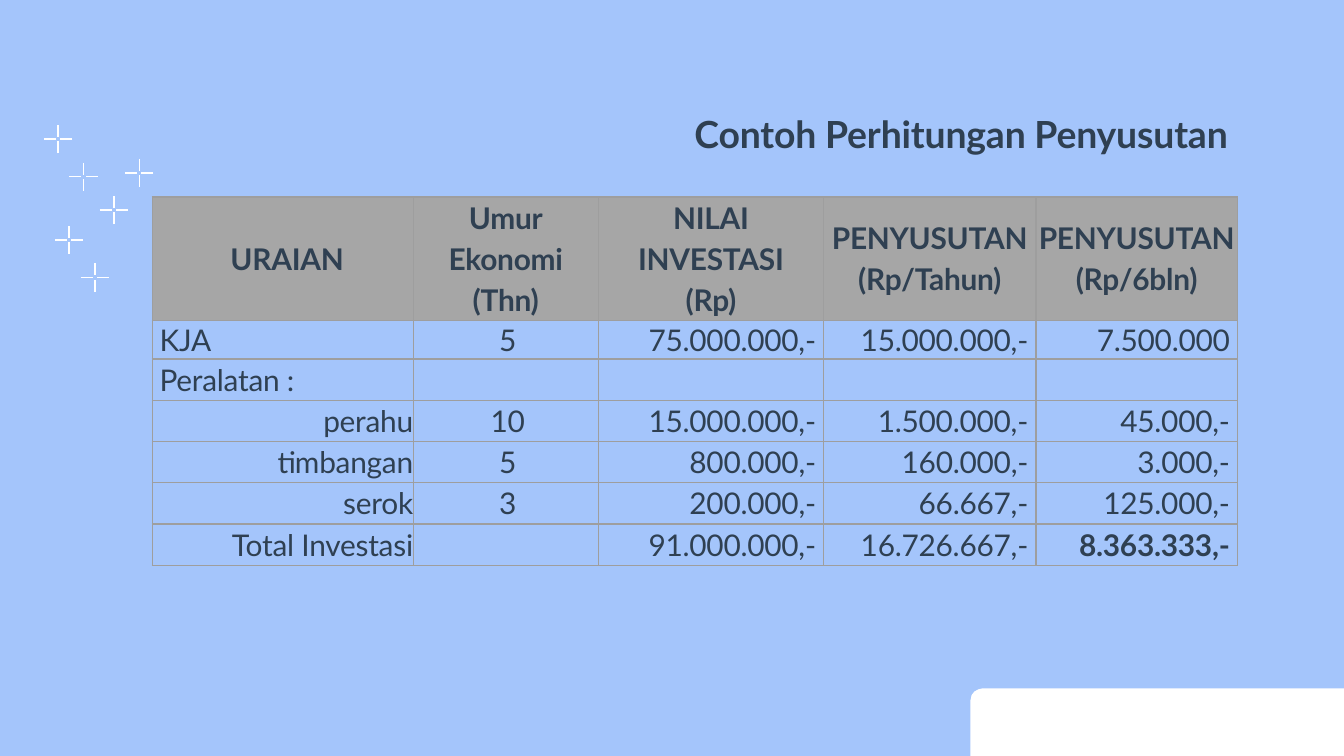
"""Build the slide with a worked depreciation table."""
from lxml.etree import SubElement
from pptx import Presentation
from pptx.dml.color import RGBColor
from pptx.enum.text import MSO_ANCHOR, PP_ALIGN
from pptx.oxml.ns import qn
from pptx.util import Pt

COLORS = {"sky": "A4C5FB", "white": "FFFFFF", "ink": "2F4052", "header": "A6A6A6", "border": "9E9E9E"}
FONT = "Lato"
WIDTH, HEIGHT = 720, 405
LEFT, CENTER, RIGHT = PP_ALIGN.LEFT, PP_ALIGN.CENTER, PP_ALIGN.RIGHT

TITLE = "Contoh Perhitungan Penyusutan"
HEADERS = ["URAIAN", "Umur\nEkonomi\n(Thn)", "NILAI\nINVESTASI\n(Rp)",
           "PENYUSUTAN\n(Rp/Tahun)", "PENYUSUTAN\n(Rp/6bln)"]
ROWS = [
    ["KJA", "5", "75.000.000,-", "15.000.000,-", "7.500.000"],
    ["Peralatan :", "", "", "", ""],
    ["perahu", "10", "15.000.000,-", "1.500.000,-", "45.000,-"],
    ["timbangan", "5", "800.000,-", "160.000,-", "3.000,-"],
    ["serok", "3", "200.000,-", "66.667,-", "125.000,-"],
    ["Total Investasi", "", "91.000.000,-", "16.726.667,-", "8.363.333,-"],
]
COLUMN_WIDTHS = [139.9, 99.2, 120.7, 113.7, 108]
ROW_HEIGHTS = [66.2, 20.6] + [22.1] * 5
TABLE_LEFT, TABLE_TOP = 81.5, 105.6

SPARKLE_SIZE, SPARKLE_GAP = 15.1, 1.1
SPARKLES = [(29.4, 121), (43.2, 141.1), (67.1, 85), (53.4, 105.1), (23.6, 67), (37.2, 87.1)]
PANEL = [(720, 368.8), (526.3, 368.8), (524.2, 369.3), (522, 370.5), (520.5, 372.4),
         (519.9, 375.2), (519.9, 405), (720, 405)]


def write_text(frame, text, size=16, bold=False, align=LEFT, gap=0, margins=(0, 0, 0, 0)):
    """Fill a text frame, one paragraph for each line of text."""
    for index, line in enumerate(text.split("\n")):
        para = frame.paragraphs[0] if index == 0 else frame.add_paragraph()
        para.alignment = align
        if index:
            para.space_before = Pt(gap)
        para.font.size = Pt(size)
        if line:
            span = para.add_run()
            span.text = line
            span.font.name, span.font.size, span.font.bold = FONT, Pt(size), bold
            span.font.color.rgb = RGBColor.from_string(COLORS["ink"])
            span.font._element.set("spc", "-10")
    sides = ("margin_left", "margin_top", "margin_right", "margin_bottom")
    for side, margin in zip(sides, margins):
        setattr(frame, side, Pt(margin))


def add_outline(page, contours, fill=None, line=None):
    """Draw one freeform from lists of points."""
    closed = fill is not None
    builder = None
    for contour in contours:
        points = [(Pt(x), Pt(y)) for x, y in contour]
        if builder is None:
            builder = page.shapes.build_freeform(*points[0])
        else:
            builder.move_to(*points[0])
        builder.add_line_segments(points[1:], close=closed)
    shape = builder.convert_to_shape()
    shape.shadow.inherit = False
    if fill:
        shape.fill.solid()
        shape.fill.fore_color.rgb = RGBColor.from_string(COLORS[fill])
    else:
        shape.fill.background()
    if line:
        shape.line.color.rgb = RGBColor.from_string(COLORS[line])
        shape.line.width = Pt(0.85)
    else:
        shape.line.fill.background()


def add_sparkle(page, left, top):
    """Draw four arms round an open middle."""
    x, y = left + SPARKLE_SIZE / 2, top + SPARKLE_SIZE / 2
    arms = [[(x + dx * reach, y + dy * reach) for reach in (SPARKLE_SIZE / 2, SPARKLE_GAP)]
            for dx, dy in ((0, -1), (0, 1), (-1, 0), (1, 0))]
    add_outline(page, arms, line="white")


def style_cell(cell, fill):
    """Give a cell its borders, fill and vertical centring."""
    properties = cell._tc.get_or_add_tcPr()
    for side in ("a:lnL", "a:lnR", "a:lnT", "a:lnB"):
        border = SubElement(properties, qn(side), w=str(Pt(0.75)))
        SubElement(SubElement(border, qn("a:solidFill")), qn("a:srgbClr"), val=COLORS["border"])
    cell.fill.solid()
    cell.fill.fore_color.rgb = RGBColor.from_string(COLORS[fill])
    cell.vertical_anchor = MSO_ANCHOR.MIDDLE


def cell_format(row, column):
    """Return the text format for a table position."""
    if row == 0:
        if column == 0:
            return dict(bold=True, align=LEFT, margins=(42, 0, 0, 0))
        return dict(bold=True, align=CENTER, gap=2.8)
    if column == 0:
        return dict(align=LEFT, margins=(4, 0, 0, 0)) if row < 3 else dict(align=RIGHT)
    if column == 1:
        return dict(align=CENTER, margins=(2, 0, 0, 0))
    is_grand_total = row == len(ROWS) and column == len(HEADERS) - 1
    return dict(align=RIGHT, bold=is_grand_total, margins=(0, 0, 4, 0))


def add_cost_table(page):
    """Place the depreciation table."""
    content = [HEADERS] + ROWS
    table = page.shapes.add_table(len(content), len(HEADERS), Pt(TABLE_LEFT), Pt(TABLE_TOP),
                                  Pt(sum(COLUMN_WIDTHS)), Pt(sum(ROW_HEIGHTS))).table
    table.first_row = table.horz_banding = False
    for column, width in zip(table.columns, COLUMN_WIDTHS):
        column.width = Pt(width)
    for r, (texts, height) in enumerate(zip(content, ROW_HEIGHTS)):
        table.rows[r].height = Pt(height)
        for c, text in enumerate(texts):
            cell = table.cell(r, c)
            style_cell(cell, "sky" if r else "header")
            settings = cell_format(r, c)
            margins = settings.pop("margins", (0, 0, 0, 0))
            write_text(cell.text_frame, text, **settings)
            cell.margin_left, cell.margin_top, cell.margin_right, cell.margin_bottom = map(Pt, margins)


def main():
    """Assemble and save the deck."""
    deck = Presentation()
    deck.slide_width, deck.slide_height = Pt(WIDTH), Pt(HEIGHT)
    page = deck.slides.add_slide(deck.slide_layouts[6])
    add_outline(page, [[(WIDTH, 0), (0, 0), (0, HEIGHT), (WIDTH, HEIGHT)]], fill="sky")
    for left, top in SPARKLES:
        add_sparkle(page, left, top)
    add_outline(page, [PANEL], fill="white")
    title = page.shapes.add_textbox(Pt(371), Pt(57.6), Pt(291.6), Pt(26))
    title.text_frame.word_wrap = True
    write_text(title.text_frame, TITLE, size=20, bold=True, margins=(1, 2, 0, 0))
    add_cost_table(page)
    deck.save("out.pptx")


if __name__ == "__main__":
    main()
